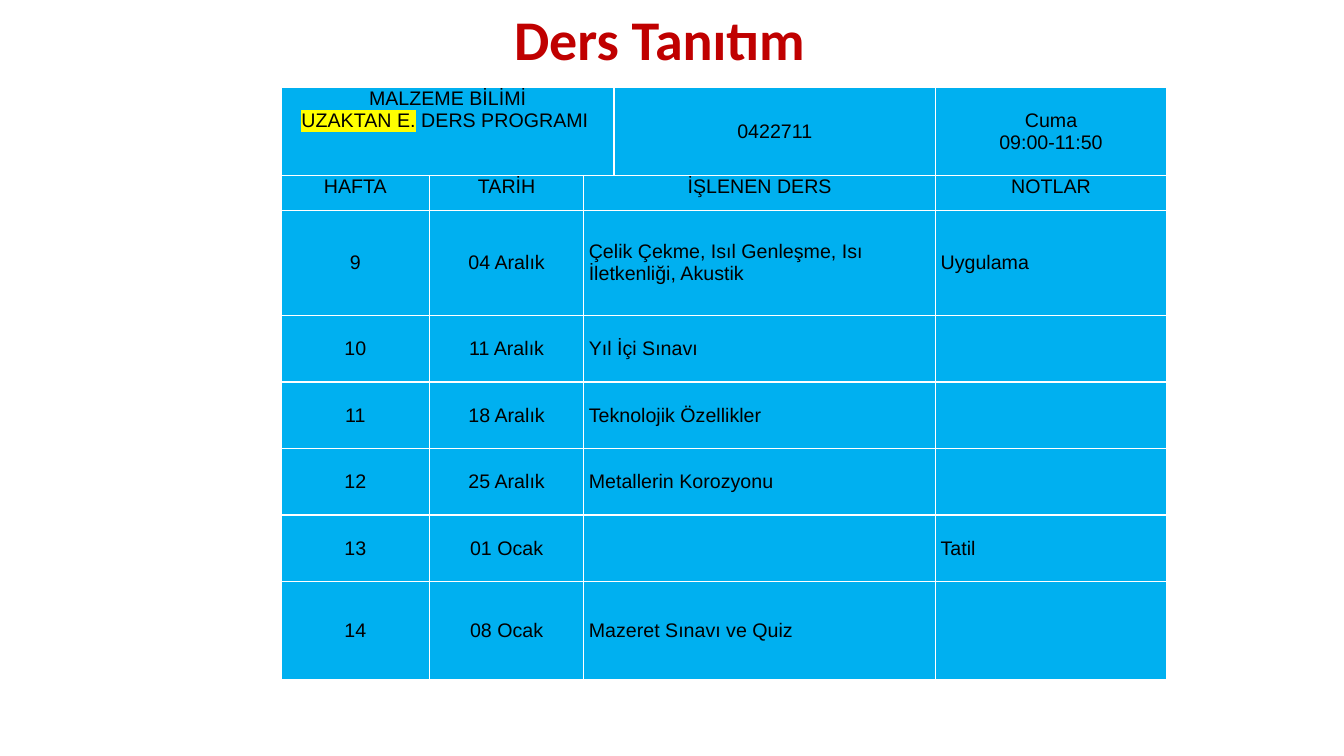
import pptx
import pptx.dml.color
import pptx.enum.text
import pptx.oxml
import pptx.oxml.ns
import pptx.util
from lxml import etree

Inches = pptx.util.Inches
Pt = pptx.util.Pt
ALIGN = pptx.enum.text.PP_ALIGN
ANCHOR = pptx.enum.text.MSO_ANCHOR

COLUMN_WIDTHS = [1.47, 1.53, 0.3, 3.19, 2.29]
ROW_HEIGHTS = [0.87, 0.35, 1.04, 0.66, 0.66, 0.66, 0.66, 0.97]
HIGHLIGHTED = "UZAKTAN E."
COURSE = ["MALZEME BİLİMİ\n" + HIGHLIGHTED + " DERS PROGRAMI ", "0422711", "Cuma\n09:00-11:50"]
HEADINGS = ["HAFTA", "TARİH", "İŞLENEN DERS", "NOTLAR"]
WEEKS = [
    ["9", "04 Aralık", "Çelik Çekme, Isıl Genleşme, Isı İletkenliği, Akustik", "Uygulama"],
    ["10", "11 Aralık", "Yıl İçi Sınavı", ""],
    ["11", "18 Aralık", "Teknolojik Özellikler", ""],
    ["12", "25 Aralık", "Metallerin Korozyonu", ""],
    ["13", "01 Ocak", "", "Tatil"],
    ["14", "08 Ocak", "Mazeret Sınavı ve Quiz", ""],
]


def color(value):
    return pptx.dml.color.RGBColor.from_string(value)


class CourseSlide:
    cell_fill = "00B0F0"
    border = "FFFFFF"
    text_color = "000000"
    title_color = "C00000"

    def __init__(self, presentation):
        self.slide = presentation.slides.add_slide(presentation.slide_layouts[6])

    def format_run(self, run, name, size, value, bold=False):
        run.font.name = name
        run.font.size = Pt(size)
        run.font.bold = bold
        run.font.color.rgb = color(value)

    def title(self, text, left, top, width, height):
        shape = self.slide.shapes.add_textbox(Inches(left), Inches(top), Inches(width), Inches(height))
        frame = shape.text_frame
        frame.word_wrap = True
        frame.vertical_anchor = ANCHOR.BOTTOM
        frame.text = text
        paragraph = frame.paragraphs[0]
        paragraph.alignment = ALIGN.CENTER
        paragraph.line_spacing = 0.9
        self.format_run(paragraph.runs[0], "Calibri", 40, self.title_color, True)

    def table(self, left, top, widths, heights):
        frame = self.slide.shapes.add_table(
            len(heights), len(widths), Inches(left), Inches(top),
            Inches(sum(widths)), Inches(sum(heights)))
        table = frame.table
        table.first_row = table.horz_banding = False
        for column, width in zip(table.columns, widths):
            column.width = Inches(width)
        for row, height in zip(table.rows, heights):
            row.height = Inches(height)
        for cell in table.iter_cells():
            self.style_cell(cell)
        return table

    def style_cell(self, cell):
        cell.margin_left = cell.margin_right = Inches(0.05)
        cell.margin_top = cell.margin_bottom = 0
        properties = cell._tc.get_or_add_tcPr()
        for side in ("lnL", "lnR", "lnT", "lnB"):
            properties.append(pptx.oxml.parse_xml(
                f'<a:{side} {pptx.oxml.ns.nsdecls("a")} w="{Pt(1)}"><a:solidFill>'
                f'<a:srgbClr val="{self.border}"/></a:solidFill></a:{side}>'))
        cell.fill.solid()
        cell.fill.fore_color.rgb = color(self.cell_fill)

    def cell_text(self, cell, text, alignment, anchor):
        cell.vertical_anchor = anchor
        cell.text_frame.text = text
        for paragraph in cell.text_frame.paragraphs:
            paragraph.alignment = alignment
            line = paragraph.text
            if line.startswith(HIGHLIGHTED):
                paragraph.runs[0].text = HIGHLIGHTED
                paragraph.add_run().text = line[len(HIGHLIGHTED):]
            for run in paragraph.runs:
                self.format_run(run, "Arial", 14, self.text_color)
                if run.text == HIGHLIGHTED:
                    self.highlight(run, "FFFF00")

    def highlight(self, run, value):
        mark = etree.Element(pptx.oxml.ns.qn("a:highlight"))
        etree.SubElement(mark, pptx.oxml.ns.qn("a:srgbClr"), val=value)
        run.font._element.find(pptx.oxml.ns.qn("a:solidFill")).addnext(mark)


def main():
    presentation = pptx.Presentation()
    presentation.slide_width = Inches(13.33)
    presentation.slide_height = Inches(7.5)
    course = CourseSlide(presentation)

    # Schedule: the topic column spans two grid columns, the course name three
    table = course.table(2.79, 0.87, COLUMN_WIDTHS, ROW_HEIGHTS)
    table.cell(0, 0).merge(table.cell(0, 2))
    for row in range(1, len(ROW_HEIGHTS)):
        table.cell(row, 2).merge(table.cell(row, 3))

    # Course row, headings and weeks
    for row, texts in enumerate([COURSE, HEADINGS] + WEEKS):
        columns = (0, 3, 4) if row == 0 else (0, 1, 2, 4)
        for column, text in zip(columns, texts):
            at_top = row == 1 or (row, column) == (0, 0)
            is_left = row > 1 and column >= 2
            course.cell_text(table.cell(row, column), text,
                             ALIGN.LEFT if is_left else ALIGN.CENTER,
                             ANCHOR.TOP if at_top else ANCHOR.MIDDLE)

    # Title
    course.title("Ders Tanıtım", 1.54, 0, 10, 0.77)
    presentation.save("out.pptx")


if __name__ == "__main__":
    main()
